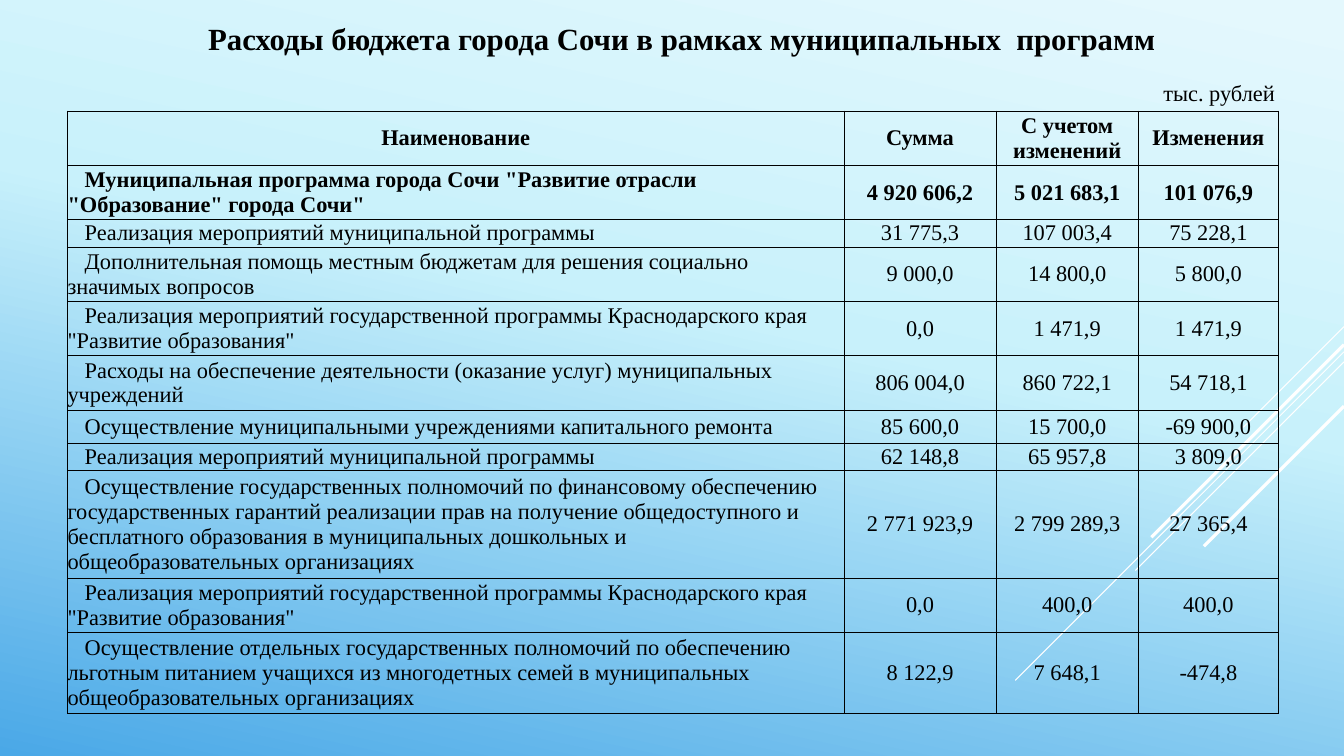
from copy import deepcopy
from dataclasses import dataclass

from lxml import etree
from pptx import Presentation
from pptx.dml.color import RGBColor
from pptx.enum.shapes import MSO_CONNECTOR
from pptx.enum.text import MSO_ANCHOR, MSO_AUTO_SIZE, PP_ALIGN
from pptx.oxml.ns import qn
from pptx.util import Inches, Pt

LEFT, CENTER = PP_ALIGN.LEFT, PP_ALIGN.CENTER
MIDDLE = MSO_ANCHOR.MIDDLE
GROW = MSO_AUTO_SIZE.SHAPE_TO_FIT_TEXT
STRAIGHT = MSO_CONNECTOR.STRAIGHT


@dataclass(frozen=True)
class Theme:
    font: str = "Times New Roman"
    text: str = "000000"
    border: str = "000000"
    ray: str = "FFFFFF"
    gradient: tuple = ((2, "E4F8FD"), (43, "C8F1FB"), (100, "4AA8E7"))
    gradient_angle: int = 102
    title_size: int = 22
    body_size: int = 16
    border_width: float = 0.5


THEME = Theme()
SLIDE_WIDTH, SLIDE_HEIGHT = 13.33, 7.5
TITLE_BOX = (1.95, 0.15, 9.62, 0.47)
UNIT_BOX = (11.44, 0.74, 1.51, 0.37)
TABLE_BOX = (0.67, 1.1, 12.01, 5.97)
COLUMN_WIDTHS = (7.7, 1.51, 1.41, 1.39)
ROW_HEIGHTS = (0.54, 0.54, 0.27, 0.54, 0.54, 0.54, 0.33, 0.27, 1.06, 0.54, 0.8)
BOLD_ROWS = 2
NAME_INDENT = 0.17

# Every ray climbs at 45 degrees to the right edge: end height, run, line width
RAYS = (
    (3.24, 1.0, 0.75),
    (3.49, 3.26, 0.75),
    (3.59, 2.07, 0.75),
    (3.42, 1.91, 2.25),
    (4.03, 1.39, 2.25),
)

BUDGET_ROWS = (
    ("Наименование", "Сумма", "С учетом изменений", "Изменения"),
    ('Муниципальная программа города Сочи "Развитие отрасли "Образование" города Сочи"',
     "4 920 606,2", "5 021 683,1", "101 076,9"),
    ("Реализация мероприятий муниципальной программы",
     "31 775,3", "107 003,4", "75 228,1"),
    ("Дополнительная помощь местным бюджетам для решения социально значимых вопросов",
     "9 000,0", "14 800,0", "5 800,0"),
    ('Реализация мероприятий государственной программы Краснодарского края "Развитие образования"',
     "0,0", "1 471,9", "1 471,9"),
    ("Расходы на обеспечение деятельности (оказание услуг) муниципальных учреждений",
     "806 004,0", "860 722,1", "54 718,1"),
    ("Осуществление муниципальными учреждениями капитального ремонта",
     "85 600,0", "15 700,0", "-69 900,0"),
    ("Реализация мероприятий муниципальной программы",
     "62 148,8", "65 957,8", "3 809,0"),
    ("Осуществление государственных полномочий по финансовому обеспечению "
     "государственных гарантий реализации прав на получение общедоступного и "
     "бесплатного образования в муниципальных дошкольных и общеобразовательных организациях",
     "2 771 923,9", "2 799 289,3", "27 365,4"),
    ('Реализация мероприятий государственной программы Краснодарского края "Развитие образования"',
     "0,0", "400,0", "400,0"),
    ("Осуществление отдельных государственных полномочий по обеспечению льготным "
     "питанием учащихся из многодетных семей в муниципальных общеобразовательных организациях",
     "8 122,9", "7 648,1", "-474,8"),
)


def write_text(frame, text, size=THEME.body_size, bold=False, align=LEFT, indent=0):
    frame.word_wrap = True
    paragraph = frame.paragraphs[0]
    paragraph.alignment = align
    if indent:
        paragraph._p.get_or_add_pPr().set("indent", str(Inches(indent)))
    run = paragraph.add_run()
    run.text = text
    run.font.name = THEME.font
    run.font.size = Pt(size)
    run.font.bold = bold
    run.font.color.rgb = RGBColor.from_string(THEME.text)


def paint_background(slide):
    fill = slide.background.fill
    fill.gradient()
    fill.gradient_angle = 360 - THEME.gradient_angle
    stop_list = slide.background._cSld.find(".//" + qn("a:gsLst"))
    stop_list.append(deepcopy(stop_list[-1]))
    for stop, (position, color) in zip(fill.gradient_stops, THEME.gradient):
        stop.position = position / 100
        stop.color.rgb = RGBColor.from_string(color)


def add_rays(slide, right_edge):
    for end_height, run, width in RAYS:
        ray = slide.shapes.add_connector(
            STRAIGHT, Inches(right_edge), Inches(end_height),
            Inches(right_edge - run), Inches(end_height + run))
        ray.line.color.rgb = RGBColor.from_string(THEME.ray)
        ray.line.width = Pt(width)
        etree.SubElement(ray._element.spPr, qn("a:effectLst"))


def add_label(slide, box, text, **text_format):
    label = slide.shapes.add_textbox(*map(Inches, box))
    write_text(label.text_frame, text, **text_format)
    label.text_frame.auto_size = GROW


def draw_borders(cell):
    properties = cell._tc.get_or_add_tcPr()
    for index, side in enumerate(("a:lnL", "a:lnR", "a:lnT", "a:lnB")):
        line = etree.Element(qn(side), w=str(Pt(THEME.border_width)))
        fill = etree.SubElement(line, qn("a:solidFill"))
        etree.SubElement(fill, qn("a:srgbClr"), val=THEME.border)
        properties.insert(index, line)


def add_budget_table(slide, box):
    table = slide.shapes.add_table(
        len(BUDGET_ROWS), len(COLUMN_WIDTHS), *map(Inches, box)).table
    table.first_row = table.horz_banding = False
    for column, width in zip(table.columns, COLUMN_WIDTHS):
        column.width = Inches(width)
    for row_index, (row, height, values) in enumerate(
            zip(table.rows, ROW_HEIGHTS, BUDGET_ROWS)):
        row.height = Inches(height)
        for column_index, (cell, value) in enumerate(zip(row.cells, values)):
            is_name = row_index > 0 and column_index == 0
            cell.margin_left = cell.margin_right = 0
            cell.margin_top = cell.margin_bottom = 0
            cell.vertical_anchor = MIDDLE
            cell.fill.background()
            draw_borders(cell)
            write_text(cell.text_frame, value, bold=row_index < BOLD_ROWS,
                       align=LEFT if is_name else CENTER,
                       indent=NAME_INDENT if is_name else 0)


def main():
    presentation = Presentation()
    presentation.slide_width = Inches(SLIDE_WIDTH)
    presentation.slide_height = Inches(SLIDE_HEIGHT)
    slide = presentation.slides.add_slide(presentation.slide_layouts[6])
    paint_background(slide)
    add_rays(slide, SLIDE_WIDTH)
    add_label(slide, TITLE_BOX,
              "Расходы бюджета города Сочи в рамках муниципальных  программ",
              size=THEME.title_size, bold=True, align=CENTER)
    add_label(slide, UNIT_BOX, "тыс. рублей")
    add_budget_table(slide, TABLE_BOX)
    presentation.save("out.pptx")


if __name__ == "__main__":
    main()
